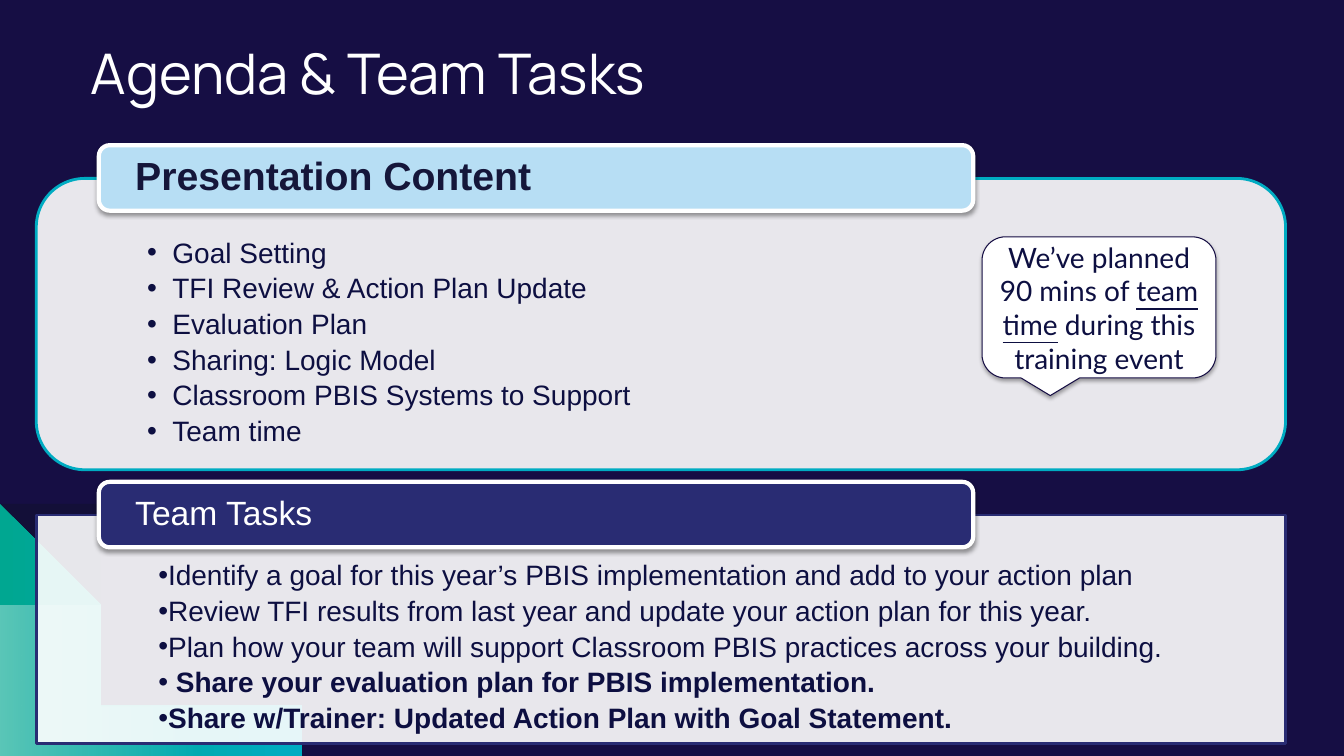
import pptx
import pptx.util
import pptx.dml.color
import pptx.enum.shapes
import pptx.enum.text
import pptx.oxml
import pptx.oxml.ns

KIND = pptx.enum.shapes.MSO_SHAPE
ALIGN = pptx.enum.text.PP_ALIGN
ANCHOR = pptx.enum.text.MSO_ANCHOR
NS = pptx.oxml.ns.nsdecls("a")
NIGHT, INK, INDIGO, TEAL, GREEN = "160E44", "0D0F41", "292C73", "00ACC2", "00A791"
WHITE, SKY, NAVY = "FFFFFF", "B7DEF4", "15163A"
WIDE, HIGH = 13.33, 7.5

GOALS = ["Goal Setting", "TFI Review & Action Plan Update", "Evaluation Plan",
         "Sharing: Logic Model", "Classroom PBIS Systems to Support", "Team time"]
TASKS = ["Identify a goal for this year’s PBIS implementation and add to your action plan",
         "Review TFI results from last year and update your action plan for this year.",
         "Plan how your team will support Classroom PBIS practices across your building."]
SHARES = [" Share your evaluation plan for PBIS implementation.",
          "Share w/Trainer: Updated Action Plan with Goal Statement."]


def rgb(code):
    """Turn a hex string into a colour."""
    return pptx.dml.color.RGBColor.from_string(code)


def inch(*sizes):
    """Turn inches into lengths."""
    return [pptx.util.Inches(size) for size in sizes]


def fade(color, share):
    """Give a colour element an opacity in percent."""
    color.append(pptx.oxml.parse_xml(f'<a:alpha {NS} val="{share * 1000}"/>'))


def paint(shape, code, alpha=100):
    """Fill a shape with one colour."""
    shape.fill.solid()
    shape.fill.fore_color.rgb = rgb(code)
    if alpha < 100:
        fade(shape.fill._xPr.find(".//" + pptx.oxml.ns.qn("a:srgbClr")), alpha)


def blend(shape, stops):
    """Fill a shape with a gradient from left to right."""
    shape.fill.gradient()
    shape.fill.gradient_angle = 0
    for stop, (code, alpha) in zip(shape.fill.gradient_stops, stops):
        stop.color.rgb = rgb(code)
        fade(stop._gs[0], alpha)


def cast(shape, alpha):
    """Drop a soft shadow below a shape."""
    shape.shadow.inherit = False
    shape._element.spPr.find(pptx.oxml.ns.qn("a:effectLst")).append(pptx.oxml.parse_xml(
        f'<a:outerShdw {NS} blurRad="39370" dist="21590" dir="5400000" algn="t" '
        f'rotWithShape="0"><a:srgbClr val="000000"><a:alpha val="{alpha * 1000}"/>'
        '</a:srgbClr></a:outerShdw>'))


def box(slide, kind, area, fill, line, width, alpha=100):
    """Draw a filled and outlined shape."""
    shape = slide.shapes.add_shape(kind, *inch(*area))
    shape.shadow.inherit = False
    paint(shape, fill, alpha)
    shape.line.color.rgb = rgb(line)
    shape.line.width = pptx.util.Pt(width)
    return shape


def write(para, text, size, face, code, **style):
    """Add one run of text."""
    run = para.add_run()
    run.text = text
    run.font.size = pptx.util.Pt(size)
    run.font.name = face
    run.font.color.rgb = rgb(code)
    for name, value in style.items():
        setattr(run.font, name, value)


def frame(shape, area, pads, anchor):
    """Place a placeholder and set its insets."""
    shape.left, shape.top, shape.width, shape.height = inch(*area)
    text = shape.text_frame
    text.auto_size = pptx.enum.text.MSO_AUTO_SIZE.NONE
    text.word_wrap = True
    text.vertical_anchor = anchor
    text.margin_left, text.margin_top, text.margin_right, text.margin_bottom = inch(*pads)
    return text


def wave(slide, bend, tip, low):
    """Draw a corner area below a curve and return it."""
    ends = [(0, low), bend[0], bend[1], (tip, HIGH)]
    dots = []
    for step in range(1, 41):
        t = step / 40
        parts = [(1 - t) ** 3, 3 * t * (1 - t) ** 2, 3 * t * t * (1 - t), t ** 3]
        dots.append(tuple(sum(p * end[axis] for p, end in zip(parts, ends)) for axis in (0, 1)))
    build = slide.shapes.build_freeform(0, low, scale=914400)
    build.add_line_segments(dots + [(0, HIGH)], close=True)
    shape = build.convert_to_shape()
    shape.shadow.inherit = False
    shape.line.fill.background()
    return shape


def decor(slide):
    """Draw the layered waves in the lower left corner."""
    paint(wave(slide, [(0.98, 7.39), (3.03, HIGH)], 3.03, 4.13), "12102F", 54)
    blend(wave(slide, [(0.95, 7.39), (2.95, HIGH)], 2.95, 4.22), [(GREEN, 100), (TEAL, 100)])
    blend(wave(slide, [(0, 5.06), (0.91, 7.35)], 2.16, 5.06), [(WHITE, 36), (WHITE, 0)])


def heading(slide, area):
    """Fill the title."""
    title = slide.shapes.title
    para = frame(title, area, [0.1] * 4, ANCHOR.MIDDLE).paragraphs[0]
    para.alignment = ALIGN.LEFT
    write(para, "Agenda & Team Tasks", 40, "Manrope", WHITE)


def section(slide, area, kind, edge, body, inset, items, hang, label):
    """Draw a panel with its list and its banner."""
    left, top, width, height = area
    box(slide, kind, area, WHITE, edge, 2, 90)
    slide.shapes._spTree.append(body._element)
    room = (left + inset, top + inset, width - 2 * inset, height - 2 * inset)
    text = frame(body, room, [0.96, 0.46, 0.96, 0.16], ANCHOR.TOP)
    for spot, (item, bold) in enumerate(items):
        para = text.add_paragraph() if spot else text.paragraphs[0]
        para.level = 1
        para.line_spacing = 0.9
        para.space_before = pptx.util.Pt(0)
        para.space_after = pptx.util.Pt(3.9)
        props = para._p.get_or_add_pPr()
        props.set("marL", str(inch(0.25)[0]))
        props.set("indent", str(inch(hang)[0]))
        props.append(pptx.oxml.parse_xml(f'<a:buChar {NS} char="•"/>'))
        write(para, item, 20, "Arial", INK, bold=bold)
    banner(slide, (left + 0.62, top - 0.33, 0.7 * width, 0.65), *label)


def banner(slide, area, name, fill, code, size, bold):
    """Draw the label on top of a panel."""
    shape = box(slide, KIND.ROUNDED_RECTANGLE, area, fill, WHITE, 3)
    cast(shape, 38)
    text = frame(shape, area, [0.33, 0, 0.33, 0], ANCHOR.MIDDLE)
    para = text.paragraphs[0]
    para.alignment = ALIGN.LEFT
    para.line_spacing = 0.9
    write(para, name, size, "Arial", code, bold=bold)


def callout(slide, area):
    """Draw the speech bubble about team time."""
    shape = box(slide, KIND.ROUNDED_RECTANGULAR_CALLOUT, area, WHITE, NIGHT, 0.75)
    cast(shape, 35)
    text = frame(shape, area, [0.1, 0.05, 0.1, 0.05], ANCHOR.MIDDLE)
    para = text.paragraphs[0]
    para.alignment = ALIGN.CENTER
    for part, under in [("We’ve planned 90 mins of ", False), ("team time", True),
                        (" during this training event", False)]:
        write(para, part, 20, "Lato", INK, underline=under)


def main():
    """Build and save the agenda slide."""
    deck = pptx.Presentation()
    deck.slide_width, deck.slide_height = inch(WIDE, HIGH)
    slide = deck.slides.add_slide(deck.slide_layouts[3])
    paint(slide.background, NIGHT)
    upper, lower = slide.placeholders[1], slide.placeholders[2]
    decor(slide)
    section(slide, (0.36, 1.77, 12.39, 2.89), KIND.ROUNDED_RECTANGLE, TEAL, upper, 0.14,
            [(goal, False) for goal in GOALS], -0.25,
            ("Presentation Content", SKY, NAVY, 28, True))
    section(slide, (0.36, 5.11, 12.39, 2.27), KIND.RECTANGLE, INDIGO, lower, 0,
            [(task, False) for task in TASKS] + [(share, True) for share in SHARES], 0,
            ("Team Tasks", INDIGO, WHITE, 24, False))
    heading(slide, (0.8, 0.26, 10.26, 0.92))
    callout(slide, (9.74, 2.35, 2.32, 1.4))
    deck.save("out.pptx")


if __name__ == "__main__":
    main()
